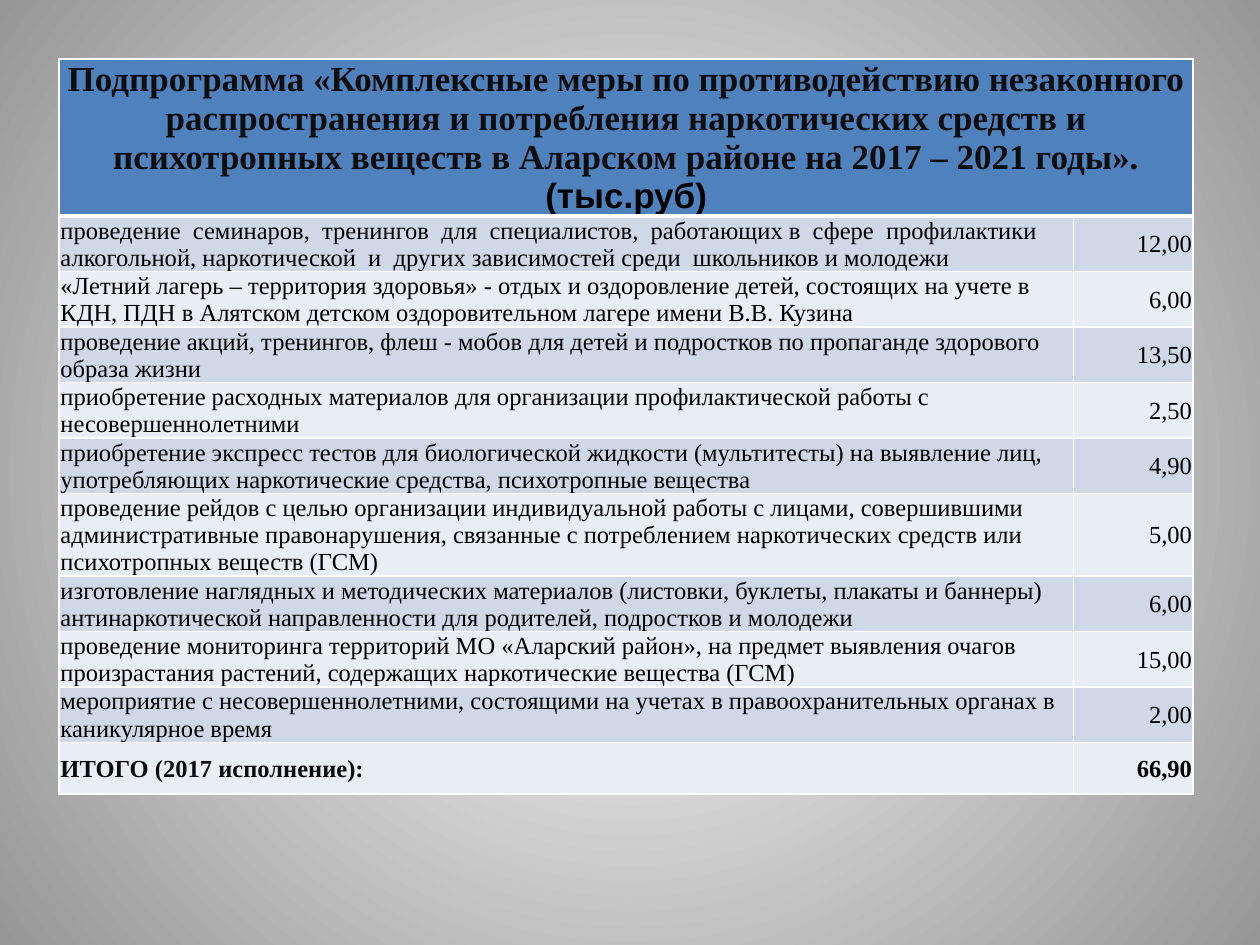
import lxml.etree
import pptx
import pptx.dml.color
import pptx.enum.text
import pptx.oxml.ns
import pptx.util

Inches = pptx.util.Inches
RGBColor = pptx.dml.color.RGBColor
ALIGN = pptx.enum.text.PP_ALIGN
qn = pptx.oxml.ns.qn

WHITE = RGBColor(0xFF, 0xFF, 0xFF)
GREY = RGBColor(0x97, 0x97, 0x97)
BLACK = RGBColor(0x00, 0x00, 0x00)
NEAR_BLACK = RGBColor(0x0D, 0x0D, 0x0D)
HEADER_BLUE = RGBColor(0x4F, 0x81, 0xBD)
BANDS = (RGBColor(0xD0, 0xD8, 0xE8), RGBColor(0xE9, 0xED, 0xF4))

TITLE = (
    "Подпрограмма «Комплексные меры по противодействию незаконного "
    "распространения и потребления наркотических средств и психотропных "
    "веществ в Аларском районе на 2017 – 2021 годы». "
)
UNIT = "(тыс.руб)"
MEASURES = [
    ("проведение  семинаров,  тренингов  для  специалистов,  работающих в  сфере  "
     "профилактики  алкогольной, наркотической  и  других зависимостей среди  "
     "школьников и молодежи", "12,00"),
    ("«Летний лагерь – территория здоровья» - отдых и оздоровление детей, состоящих "
     "на учете в КДН, ПДН в Алятском детском оздоровительном лагере имени "
     "В.В. Кузина", "6,00"),
    ("проведение акций, тренингов, флеш - мобов для детей и подростков по "
     "пропаганде здорового образа жизни", "13,50"),
    ("приобретение расходных материалов для организации профилактической работы с "
     "несовершеннолетними", "2,50"),
    ("приобретение экспресс тестов для биологической жидкости (мультитесты) на "
     "выявление лиц, употребляющих наркотические средства, психотропные "
     "вещества", "4,90"),
    ("проведение рейдов с целью организации индивидуальной работы с лицами, "
     "совершившими административные правонарушения, связанные с потреблением "
     "наркотических средств или психотропных веществ (ГСМ)", "5,00"),
    ("изготовление наглядных и методических материалов (листовки, буклеты, плакаты "
     "и баннеры) антинаркотической направленности для родителей, подростков и "
     "молодежи", "6,00"),
    ("проведение мониторинга территорий МО «Аларский район», на предмет выявления "
     "очагов произрастания растений, содержащих наркотические вещества "
     "(ГСМ)", "15,00"),
    ("мероприятие с несовершеннолетними, состоящими на учетах в правоохранительных "
     "органах в каникулярное время", "2,00"),
]
TOTAL = ("ИТОГО (2017 исполнение):", "66,90")


class SlideBuilder:
    """Holds the style and the current slide."""

    font = "Times New Roman"
    title_font = "Arial"
    title_size = 20
    body_size = 14

    def __init__(self, presentation):
        self.slide = presentation.slides.add_slide(presentation.slide_layouts[6])

    def background(self, center, edge):
        """Radial gradient from the middle of the slide outwards."""
        fill = self.slide.background.fill
        fill.gradient()
        for stop, color, position in zip(fill.gradient_stops, (center, edge), (0, 1)):
            stop.color.rgb = color
            stop.position = position
        gradient = self.slide.element.find(".//" + qn("a:gradFill"))
        gradient.remove(gradient.find(qn("a:lin")))
        circle = lxml.etree.SubElement(gradient, qn("a:path"), path="circle")
        sides = dict.fromkeys("ltrb", "50000")
        lxml.etree.SubElement(circle, qn("a:fillToRect"), **sides)

    def table(self, left, top, column_widths, row_heights):
        frame = self.slide.shapes.add_table(
            len(row_heights), len(column_widths), Inches(left), Inches(top),
            Inches(sum(column_widths)), Inches(sum(row_heights)))
        for column, width in zip(frame.table.columns, column_widths):
            column.width = Inches(width)
        for row, height in zip(frame.table.rows, row_heights):
            row.height = Inches(height)
        return frame.table

    def border(self, cell, side, width):
        line = lxml.etree.SubElement(
            cell._tc.get_or_add_tcPr(), qn("a:ln" + side),
            w=str(pptx.util.Pt(width)))
        solid = lxml.etree.SubElement(line, qn("a:solidFill"))
        lxml.etree.SubElement(solid, qn("a:srgbClr"), val=str(WHITE))

    def cell(self, cell, color, top=1, bottom=1):
        """Fill, borders, margins and anchor of one cell."""
        for side, width in (("L", 1), ("R", 1), ("T", top), ("B", bottom)):
            self.border(cell, side, width)
        cell.fill.solid()
        cell.fill.fore_color.rgb = color
        cell.margin_left = cell.margin_right = cell.margin_top = Inches(0.01)
        cell.margin_bottom = 0
        cell.vertical_anchor = pptx.enum.text.MSO_ANCHOR.MIDDLE

    def run(self, cell, text, align, size, color=BLACK, bold=False, font=None):
        paragraph = cell.text_frame.paragraphs[0]
        paragraph.alignment = align
        run = paragraph.add_run()
        run.text = text
        run.font.name = font or self.font
        run.font.size = pptx.util.Pt(size)
        run.font.bold = bold
        run.font.color.rgb = color


def main():
    presentation = pptx.Presentation()
    presentation.slide_width = Inches(10)
    presentation.slide_height = Inches(7.5)
    builder = SlideBuilder(presentation)
    builder.background(WHITE, GREY)

    rows = MEASURES + [TOTAL]
    table = builder.table(0.47, 0.47, (8.05, 0.95), [1.17] + [0.41] * len(rows))

    header = table.cell(0, 0)
    header.merge(table.cell(0, 1))
    for column in range(2):
        builder.cell(table.cell(0, column), HEADER_BLUE, bottom=3)
    builder.run(header, TITLE, ALIGN.CENTER, builder.title_size, NEAR_BLACK, True)
    builder.run(header, UNIT, ALIGN.CENTER, builder.title_size, BLACK, True,
                builder.title_font)

    for index, (measure, amount) in enumerate(rows):
        is_total = index == len(MEASURES)
        measure_color = NEAR_BLACK if is_total else BLACK
        for column, (text, align, color) in enumerate((
                (measure, ALIGN.LEFT, measure_color), (amount, ALIGN.RIGHT, BLACK))):
            cell = table.cell(index + 1, column)
            builder.cell(cell, BANDS[index % 2], top=3 if index == 0 else 1)
            builder.run(cell, text, align, builder.body_size, color, is_total)

    presentation.save("out.pptx")


if __name__ == "__main__":
    main()
